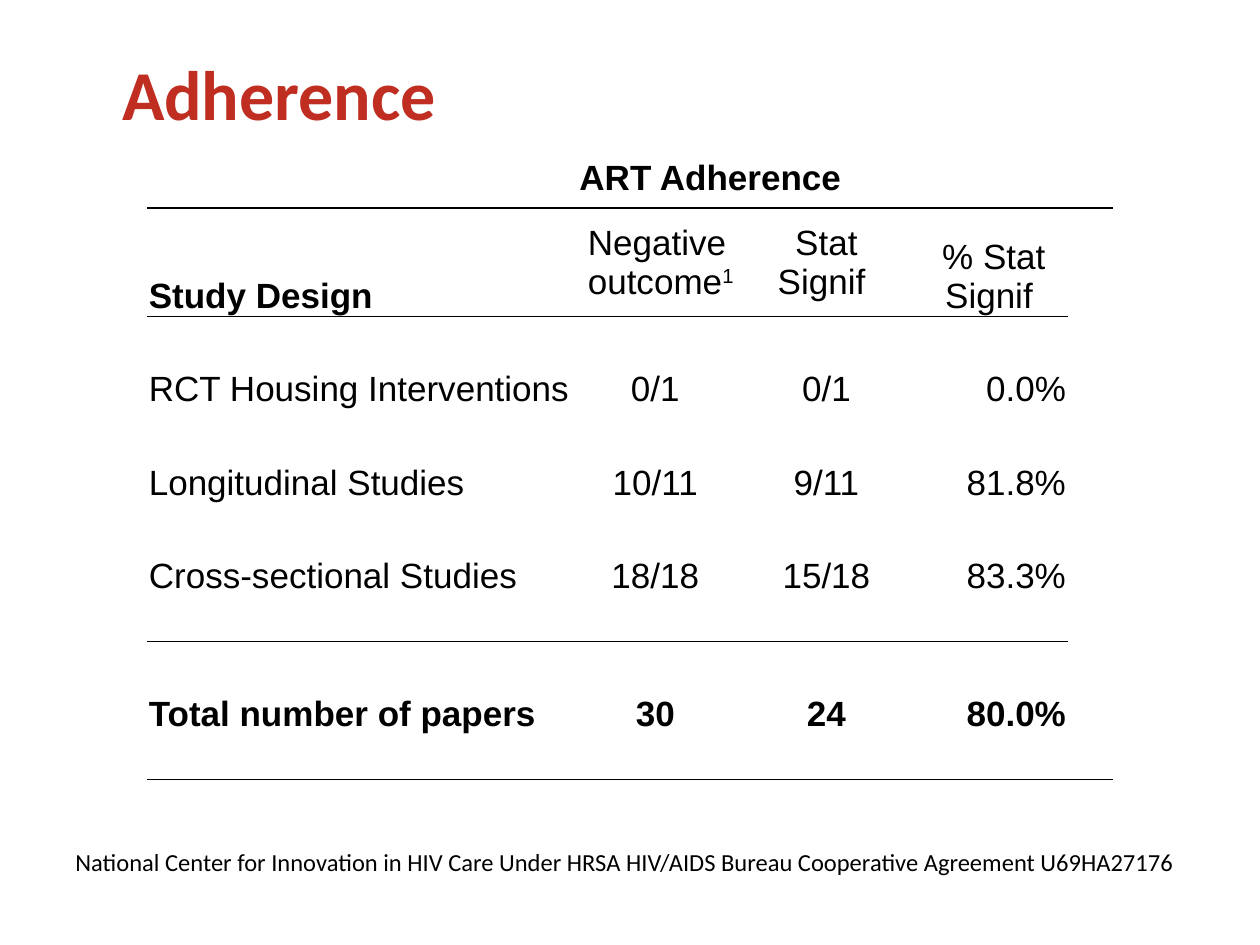
from lxml import etree
from pptx import Presentation
from pptx.dml.color import RGBColor
from pptx.enum import text
from pptx.oxml import ns
from pptx.util import Cm, Pt

BLACK = RGBColor(0x00, 0x00, 0x00)
RED = RGBColor(0xBF, 0x2E, 0x21)
NO_STYLE = "{2D5ABB26-0587-4C30-8999-92F81FD0307C}"
LEFT, CENTER, RIGHT = text.PP_ALIGN.LEFT, text.PP_ALIGN.CENTER, text.PP_ALIGN.RIGHT
MIDDLE, BOTTOM = text.MSO_ANCHOR.MIDDLE, text.MSO_ANCHOR.BOTTOM


def write(tf, content, font="Arial", size=20, color=BLACK, bold=False,
          align=LEFT, superscript=""):
    """Put one paragraph per line into tf, with an optional superscript at the end."""
    for i, line in enumerate(content.split("\n")):
        p = tf.paragraphs[0] if i == 0 else tf.add_paragraph()
        p.alignment = align
        p.add_run().text = line
    if superscript:
        r = p.add_run()
        r.text = superscript
        r.font._element.set("baseline", "30000")
    for p in tf.paragraphs:
        for r in p.runs:
            r.font.name, r.font.size, r.font.bold = font, Pt(size), bold
            r.font.color.rgb = color


def rule_below(cell, width):
    tc_pr = cell._tc.get_or_add_tcPr()
    ln = etree.Element(ns.qn("a:lnB"), w=str(Pt(width)))
    fill = etree.SubElement(ln, ns.qn("a:solidFill"))
    etree.SubElement(fill, ns.qn("a:srgbClr"), val=str(BLACK))
    tc_pr.insert(0, ln)


prs = Presentation()
prs.slide_width, prs.slide_height = Cm(25.4), Cm(19.05)
s = prs.slides.add_slide(prs.slide_layouts[5])

# Title
title = s.shapes.title
title.left, title.top, title.width, title.height = Cm(1.27), Cm(0.76), Cm(22.86), Cm(2.08)
tf = title.text_frame
tf.vertical_anchor = BOTTOM
tf.margin_left = Cm(1.19)
write(tf, "Adherence", font="Calibri", size=40, color=RED, bold=True)

# Table grid
col_widths = [3.35, 3.12, 2.21, 3.12, 0.33, 3.12, 0.33, 2.97, 0.91]
row_heights = [1.22, 2.18] + [0.91, 0.97] * 3 + [0.91, 0.91, 0.97, 0.91]
table = s.shapes.add_table(len(row_heights), len(col_widths), Cm(2.97), Cm(2.97),
                           Cm(sum(col_widths)), Cm(sum(row_heights))).table
table.first_row = table.horz_banding = False
table._tbl.tblPr.find(ns.qn("a:tableStyleId")).text = NO_STYLE
for col, width in zip(table.columns, col_widths):
    col.width = Cm(width)
for row, height in zip(table.rows, row_heights):
    row.height = Cm(height)
for cell in table.iter_cells():
    cell.fill.background()
    cell.margin_left = cell.margin_right = cell.margin_top = Cm(0.03)
    cell.margin_bottom = 0
    cell.vertical_anchor = BOTTOM

# Rules: row, number of columns crossed, width in points
for row, count, width in [(0, 9, 1), (1, 8, 0.5), (8, 8, 0.5), (11, 9, 0.5)]:
    for col in range(count):
        rule_below(table.cell(row, col), width)

# Headings: row, first column, last column, wording, anchor, format
headings = [
    (0, 3, 8, "ART Adherence", MIDDLE, {"bold": True}),
    (1, 0, 1, "Study Design", BOTTOM, {"bold": True}),
    (1, 3, 4, "Negative\noutcome", MIDDLE, {"superscript": "1"}),
    (1, 5, 5, "Stat\nSignif ", MIDDLE, {"align": CENTER}),
    (1, 7, 7, "% Stat\nSignif ", BOTTOM, {"align": CENTER}),
]
for row, first, last, wording, anchor, style in headings:
    cell = table.cell(row, first)
    if last > first:
        cell.merge(table.cell(row, last))
    cell.vertical_anchor = anchor
    write(cell.text_frame, wording, **style)
table.cell(1, 3).margin_left = Cm(0.2)

# Studies: row, last column of the label, values
studies = [
    (3, 2, ["RCT Housing Interventions", "0/1", "0/1", "0.0%"]),
    (5, 1, ["Longitudinal Studies", "10/11", "9/11", "81.8%"]),
    (7, 2, ["Cross-sectional Studies", "18/18", "15/18", "83.3%"]),
    (10, 2, ["Total number of papers", "30", "24", "80.0%"]),
]
for row, label_end, values in studies:
    table.cell(row, 0).merge(table.cell(row, label_end))
    for col, align, value in zip([0, 3, 5, 7], [LEFT, CENTER, CENTER, RIGHT], values):
        write(table.cell(row, col).text_frame, value, align=align, bold=row == 10)

# Footer
footer = s.shapes.add_textbox(Cm(1.27), Cm(16.95), Cm(22.86), Cm(0.88))
footer.text_frame.word_wrap = True
write(footer.text_frame, "National Center for Innovation in HIV Care Under HRSA HIV/AIDS "
      "Bureau Cooperative Agreement U69HA27176", font="Calibri", size=14)

prs.save("out.pptx")
